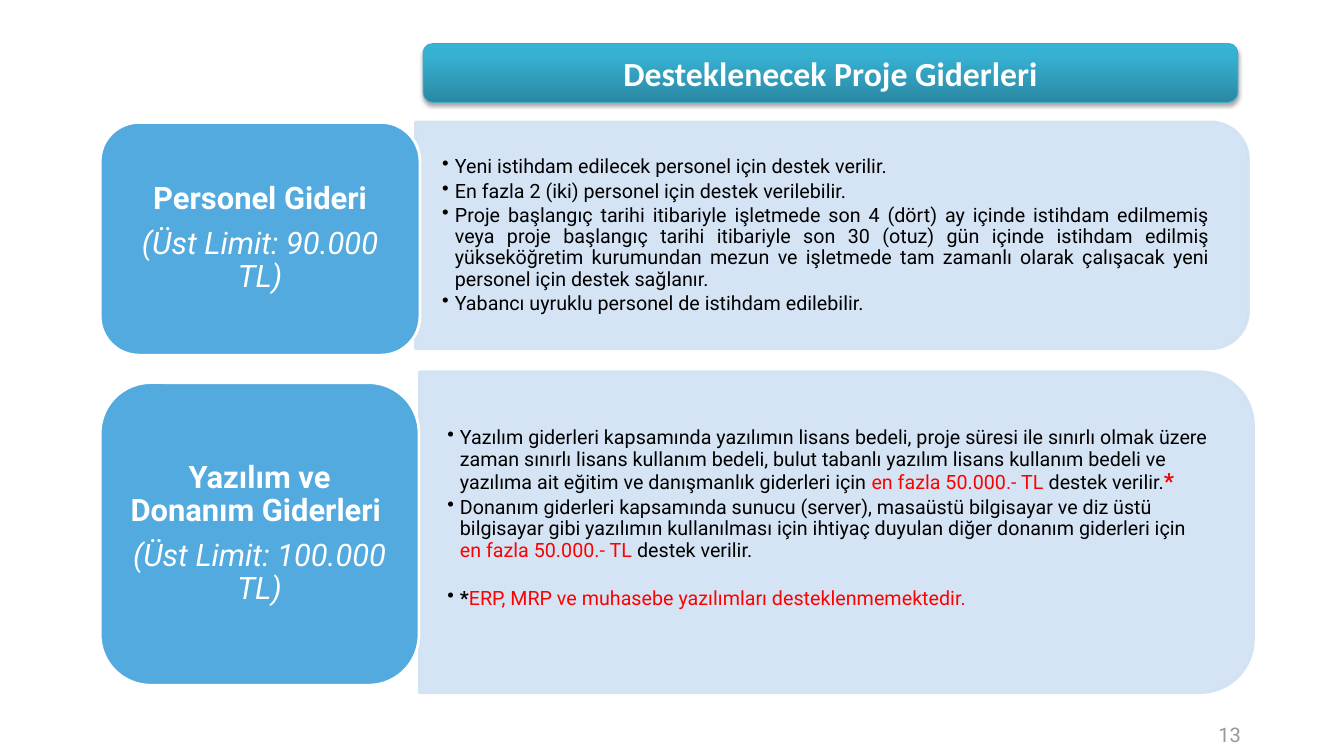
from copy import deepcopy

from pptx import Presentation
from pptx.dml.color import RGBColor
from pptx.enum.shapes import MSO_SHAPE
from pptx.enum.text import MSO_ANCHOR, PP_ALIGN
from pptx.oxml import parse_xml
from pptx.oxml.ns import nsdecls, qn
from pptx.oxml.xmlchemy import OxmlElement
from pptx.util import Pt

THEME = {
    "body_font": "Roboto", "title_font": "Calibri",
    "title": 24, "card": 22, "body": 14, "star": 16, "number": 14.3,
    "white": RGBColor.from_string("FFFFFF"),
    "black": RGBColor.from_string("000000"),
    "red": RGBColor.from_string("FF0000"),
    "grey": RGBColor.from_string("9499A1"),
    "card_fill": RGBColor.from_string("52AADF"),
    "panel_fill": RGBColor.from_string("D1E2F3"),
    "banner_line": RGBColor.from_string("46AAC5"),
    "banner_stops": [(0, "2A88A2"), (0.8, "37B1D2"), (1, "34B4D6")],
}


def set_frame(tf, x_inset, y_inset):
    tf.word_wrap = True
    tf.vertical_anchor = MSO_ANCHOR.MIDDLE
    tf.margin_left = tf.margin_right = Pt(x_inset)
    tf.margin_top = tf.margin_bottom = Pt(y_inset)


def add_run(p, text, size, color, bold=False, italic=False, font="body_font"):
    r = p.add_run()
    r.text = text
    r.font.name = THEME[font]
    r.font.size = Pt(THEME[size])
    r.font.color.rgb = THEME[color]
    r.font.bold = bold
    r.font.italic = italic


prs = Presentation()
prs.slide_width, prs.slide_height = Pt(956.16), Pt(537.84)
slide = prs.slides.add_slide(prs.slide_layouts[6])
shapes = slide.shapes

# Slide number
s = shapes.add_textbox(Pt(666.7), Pt(508.3), Pt(223.2), Pt(28.8))
set_frame(s.text_frame, 7.2, 3.6)
p = s.text_frame.paragraphs[0]
p.alignment = PP_ALIGN.RIGHT
add_run(p, "13", "number", "grey")

# Title banner with gradient and soft shadow
s = shapes.add_shape(MSO_SHAPE.ROUNDED_RECTANGLE, Pt(301), Pt(31), Pt(579.6), Pt(41.8))
s.fill.gradient()
s.fill.gradient_angle = 90
stops = s._element.spPr.find(".//" + qn("a:gsLst"))
stops.append(deepcopy(stops[-1]))
for stop, (position, color) in zip(s.fill.gradient_stops, THEME["banner_stops"]):
    stop.position = position
    stop.color.rgb = RGBColor.from_string(color)
s.line.color.rgb = THEME["banner_line"]
s.line.width = Pt(0.75)
s._element.spPr.append(parse_xml(
    f'<a:effectLst {nsdecls("a")}><a:outerShdw blurRad="{Pt(3.1)}" dist="{Pt(1.8)}" '
    'dir="5400000" rotWithShape="0"><a:srgbClr val="000000"><a:alpha val="35000"/>'
    '</a:srgbClr></a:outerShdw></a:effectLst>'))
set_frame(s.text_frame, 8.6, 4.3)
p = s.text_frame.paragraphs[0]
p.alignment = PP_ALIGN.CENTER
add_run(p, "Desteklenecek Proje Giderleri", "title", "white", bold=True, font="title_font")

# Expense rows: boxes are left, top, width, height; each bullet is a list of runs
rows = [
    {
        "panel": (295.6, 86.8, 592.6, 161.3),
        "text": (295.2, 95, 584.6, 145.4),
        "card": (71.3, 87.1, 227.5, 165.6),
        "heading": "Personel Gideri",
        "limit": "(Üst Limit: 90.000 TL)",
        "align": PP_ALIGN.JUSTIFY,
        "gap": 0,
        "bullets": [
            [("Yeni istihdam edilecek personel için destek verilir.", "body", "black")],
            [("En fazla 2 (iki) personel için destek verilebilir.", "body", "black")],
            [("Proje başlangıç tarihi itibariyle işletmede son 4 (dört) ay içinde istihdam "
              "edilmemiş veya proje başlangıç tarihi itibariyle son 30 (otuz) gün içinde "
              "istihdam edilmiş yükseköğretim kurumundan mezun ve işletmede tam zamanlı "
              "olarak çalışacak yeni personel için destek sağlanır.", "body", "black")],
            [("Yabancı uyruklu personel de istihdam edilebilir.", "body", "black")],
        ],
    },
    {
        "panel": (298.4, 264.6, 593.3, 228.2),
        "text": (298.8, 275, 581.8, 205.9),
        "card": (71.3, 272.2, 226.8, 215.3),
        "heading": "Yazılım ve Donanım Giderleri ",
        "limit": "(Üst Limit: 100.000 TL)",
        "align": PP_ALIGN.LEFT,
        "gap": 17.4,
        "bullets": [
            [("Yazılım giderleri kapsamında yazılımın lisans bedeli, proje süresi ile sınırlı "
              "olmak üzere zaman sınırlı lisans kullanım bedeli, bulut tabanlı yazılım lisans "
              "kullanım bedeli ve yazılıma ait eğitim ve danışmanlık giderleri için ",
              "body", "black"),
             ("en fazla 50.000.- TL", "body", "red"),
             (" destek verilir.", "body", "black"),
             ("*", "star", "red", True)],
            [("Donanım giderleri kapsamında sunucu (server), masaüstü bilgisayar ve diz üstü "
              "bilgisayar gibi yazılımın kullanılması için ihtiyaç duyulan diğer donanım "
              "giderleri için ", "body", "black"),
             ("en fazla 50.000.- TL ", "body", "red"),
             ("destek verilir.", "body", "black")],
            [("*", "body", "black", True),
             ("ERP, MRP ve muhasebe yazılımları desteklenmemektedir.", "body", "red")],
        ],
    },
]

for row in rows:
    # Panel: a top-rounded rectangle turned so its round corners face right
    left, top, width, height = row["panel"]
    s = shapes.add_shape(MSO_SHAPE.ROUND_2_SAME_RECTANGLE,
                         Pt(left + (width - height) / 2), Pt(top + (height - width) / 2),
                         Pt(height), Pt(width))
    s.rotation = 90
    s.shadow.inherit = False
    s.fill.solid()
    s.fill.fore_color.rgb = s.line.color.rgb = THEME["panel_fill"]
    s.line.width = Pt(2)
    for color in s._element.spPr.iter(qn("a:srgbClr")):
        alpha = OxmlElement("a:alpha")
        alpha.set("val", "90000")
        color.append(alpha)

    # Bullet text
    s = shapes.add_textbox(*map(Pt, row["text"]))
    tf = s.text_frame
    set_frame(tf, 19.4, 10.1)
    tf.margin_bottom = Pt(10.1 + row["gap"])
    for i, runs in enumerate(row["bullets"]):
        p = tf.add_paragraph() if i else tf.paragraphs[0]
        pPr = p._p.get_or_add_pPr()
        pPr.set("marL", str(Pt(9)))
        pPr.set("indent", str(Pt(-9)))
        bullet = OxmlElement("a:buChar")
        bullet.set("char", "•")
        pPr.append(bullet)
        p.level = 1
        p.alignment = row["align"]
        p.line_spacing = 0.9
        p.space_after = Pt(2.1)
        for run in runs:
            add_run(p, *run)
    p.space_before = Pt(row["gap"])

    # Card with heading and limit
    s = shapes.add_shape(MSO_SHAPE.ROUNDED_RECTANGLE, *map(Pt, row["card"]))
    s.shadow.inherit = False
    s.fill.solid()
    s.fill.fore_color.rgb = THEME["card_fill"]
    s.line.color.rgb = THEME["white"]
    s.line.width = Pt(2)
    tf = s.text_frame
    set_frame(tf, 6.5, 3.6)
    for p, text, bold in ((tf.paragraphs[0], row["heading"], True),
                          (tf.add_paragraph(), row["limit"], False)):
        p.alignment = PP_ALIGN.CENTER
        p.line_spacing = 0.9
        p.space_after = Pt(7.7)
        add_run(p, text, "card", "white", bold=bold, italic=not bold)

prs.save("out.pptx")
